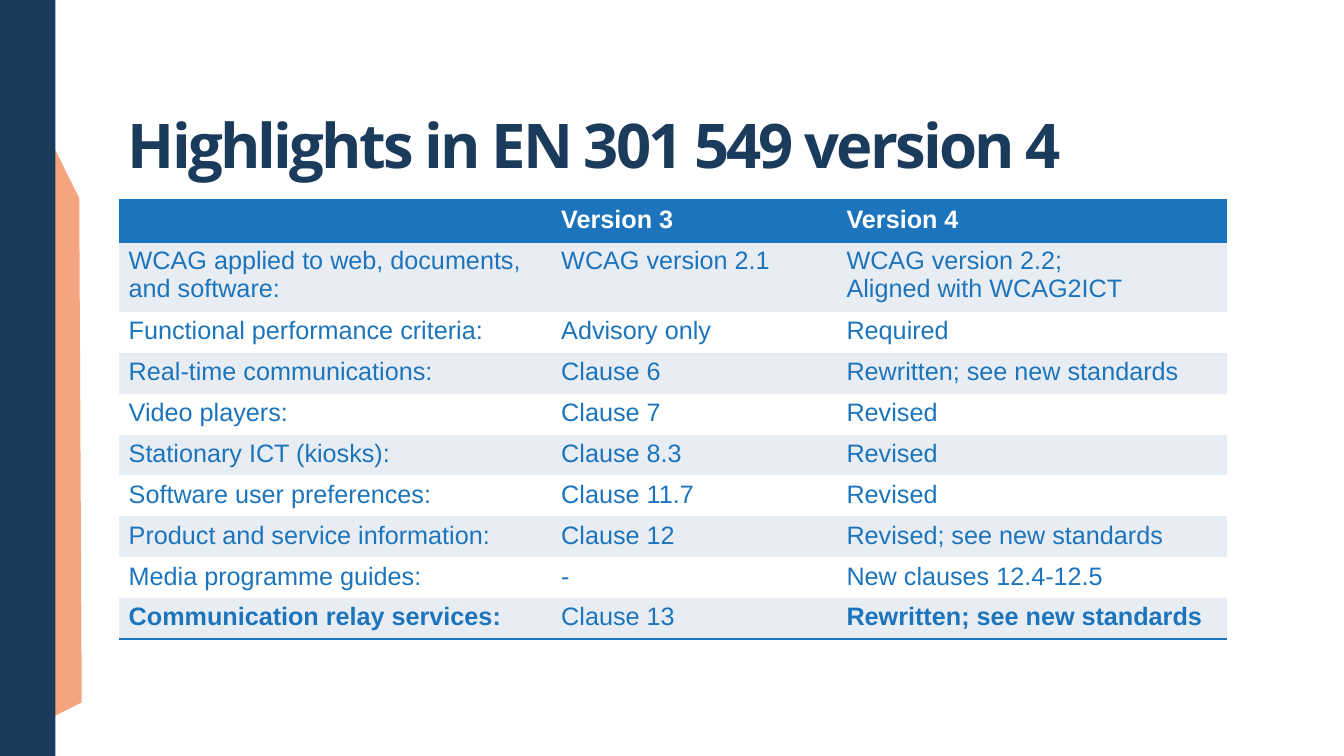
from dataclasses import dataclass

from lxml import etree
from pptx import Presentation
from pptx.dml.color import RGBColor
from pptx.enum.shapes import MSO_SHAPE
from pptx.enum.text import MSO_ANCHOR
from pptx.oxml.ns import qn
from pptx.util import Cm, Pt

RECTANGLE = MSO_SHAPE.RECTANGLE
STRIPE = MSO_SHAPE.DIAGONAL_STRIPE
BOTTOM = MSO_ANCHOR.BOTTOM
NO_STYLE = "{2D5ABB26-0587-4C30-8999-92F81FD0307C}"


@dataclass(frozen=True)
class Theme:
    navy: str = "1A3B5B"
    orange: str = "EB4D00"
    blue: str = "1C75BC"
    pale: str = "E8ECF3"
    white: str = "FFFFFF"
    title_font: str = "Open Sans"
    body_font: str = "Arial"
    title_size: int = 44
    body_size: int = 18
    rule_width: int = 2


class SlideBuilder:
    def __init__(self, page, theme):
        self.page = page
        self.theme = theme

    def shape(self, kind, left, top, width, height, color, opacity=100):
        shape = self.page.shapes.add_shape(
            kind, Cm(left), Cm(top), Cm(width), Cm(height))
        shape.shadow.inherit = False
        shape.fill.solid()
        shape.fill.fore_color.rgb = RGBColor.from_string(color)
        shape.line.fill.background()
        if opacity < 100:
            tint = next(shape.fill._xPr.iter(qn("a:srgbClr")))
            etree.SubElement(tint, qn("a:alpha"), val=str(opacity * 1000))
        return shape

    def span(self, para, text, font, size, color, bold):
        span = para.add_run()
        span.text = text
        span.font.name = font
        span.font.size = Pt(size)
        span.font.bold = bold
        span.font.color.rgb = RGBColor.from_string(color)
        return span

    def title(self, text, left, top, width, height):
        box = self.page.shapes.add_textbox(
            Cm(left), Cm(top), Cm(width), Cm(height))
        frame = box.text_frame
        frame.word_wrap = True
        frame.vertical_anchor = BOTTOM
        para = frame.paragraphs[0]
        para.line_spacing = 0.9
        span = self.span(para, text, self.theme.title_font,
                         self.theme.title_size, self.theme.navy, True)
        span.font._element.set("spc", "-200")

    def border(self, cell, side):
        line = etree.SubElement(cell._tc.get_or_add_tcPr(), qn(f"a:ln{side}"),
                                w=str(Pt(self.theme.rule_width)))
        fill = etree.SubElement(line, qn("a:solidFill"))
        etree.SubElement(fill, qn("a:srgbClr"), val=self.theme.blue)

    def cell(self, cell, text, fill, color, bold, sides):
        for side in sides:
            self.border(cell, side)
        cell.fill.solid()
        cell.fill.fore_color.rgb = RGBColor.from_string(fill)
        frame = cell.text_frame
        for index, line in enumerate(text.splitlines()):
            para = frame.add_paragraph() if index else frame.paragraphs[0]
            self.span(para, line, self.theme.body_font,
                      self.theme.body_size, color, bold)

    def table(self, rows, bold_cells, left, top, widths, row_height):
        theme = self.theme
        table = self.page.shapes.add_table(
            len(rows), len(widths), Cm(left), Cm(top),
            Cm(sum(widths)), Cm(row_height * len(rows))).table
        table._tbl.tblPr.find(qn("a:tableStyleId")).text = NO_STYLE
        for column, width in zip(table.columns, widths):
            column.width = Cm(width)
        last = len(rows) - 1
        for r, texts in enumerate(rows):
            table.rows[r].height = Cm(row_height)
            if r == 0:
                fill, color, sides = theme.blue, theme.white, "TB"
            else:
                fill = theme.pale if r % 2 else theme.white
                color, sides = theme.blue, "B" if r == last else ""
            for c, text in enumerate(texts):
                bold = r == 0 or (r, c) in bold_cells
                self.cell(table.cell(r, c), text, fill, color, bold, sides)


ROWS = [
    ("", "Version 3", "Version 4"),
    ("WCAG applied to web, documents, and software:", "WCAG version 2.1",
     "WCAG version 2.2;\nAligned with WCAG2ICT"),
    ("Functional performance criteria:", "Advisory only", "Required"),
    ("Real-time communications:", "Clause 6", "Rewritten; see new standards"),
    ("Video players:", "Clause 7", "Revised"),
    ("Stationary ICT (kiosks):", "Clause 8.3", "Revised"),
    ("Software user preferences:", "Clause 11.7", "Revised"),
    ("Product and service information:", "Clause 12",
     "Revised; see new standards"),
    ("Media programme guides:", "-", "New clauses 12.4-12.5"),
    ("Communication relay services:", "Clause 13",
     "Rewritten; see new standards"),
]


def main():
    deck = Presentation()
    deck.slide_width, deck.slide_height = Cm(33.87), Cm(19.05)
    theme = Theme()
    builder = SlideBuilder(deck.slides.add_slide(deck.slide_layouts[6]), theme)

    # Side decoration: orange stripe behind the navy band
    stripe = builder.shape(STRIPE, -2.06, 4.09, 6.53, 13.26, theme.orange, 50)
    stripe.adjustments[0] = 0.86
    stripe.rotation = 153.5
    builder.shape(RECTANGLE, 0, 0, 1.4, 19.05, theme.navy)

    # Title
    builder.title("Highlights in EN 301 549 version 4", 2.97, 1.02, 27.94, 3.68)

    # Comparison of the two versions, with the last row's change stressed
    last = len(ROWS) - 1
    builder.table(ROWS, {(last, 0), (last, 2)}, 2.99, 5.05,
                  (10.9, 7.19, 9.85), 1.03)

    deck.save("out.pptx")


if __name__ == "__main__":
    main()
